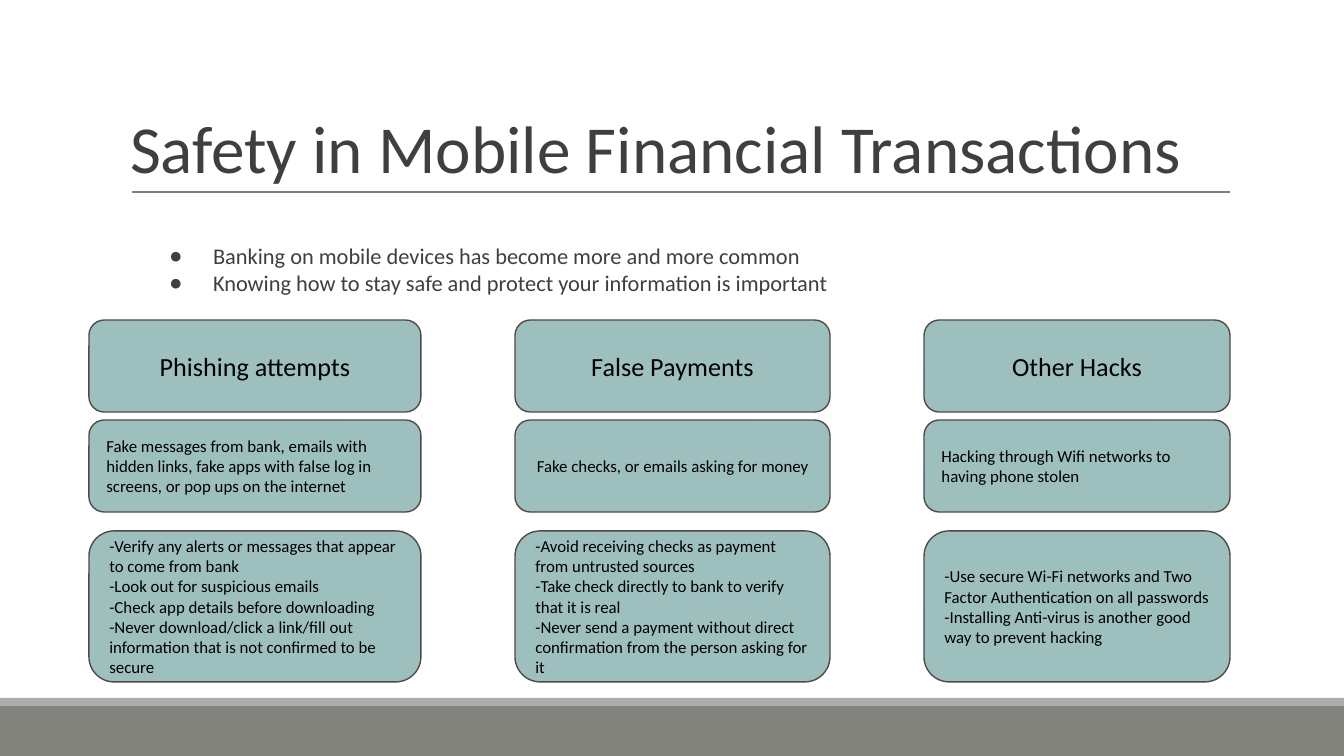
"""Build the slide on safety in mobile financial transactions."""
import pptx
import pptx.dml.color
import pptx.enum.shapes
import pptx.enum.text
import pptx.oxml.ns
import pptx.util
from lxml import etree

RGB = pptx.dml.color.RGBColor
SHAPE = pptx.enum.shapes.MSO_SHAPE
ALIGN = pptx.enum.text.PP_ALIGN
ANCHOR = pptx.enum.text.MSO_ANCHOR

SCALE = 914400 / 134.4
FONT = "Calibri"
INK = RGB(0x3F, 0x3F, 0x3F)
BLACK = RGB(0, 0, 0)
TEAL = RGB(0x9D, 0xBF, 0xBE)
EDGE = RGB(0x51, 0x49, 0x49)
RULE = RGB(0x7F, 0x7F, 0x7F)
BAND = RGB(0x82, 0x83, 0x7C)
STRIP = RGB(0xAC, 0xAD, 0xA8)

TITLE = "Safety in Mobile Financial Transactions"
POINTS = [
    "Banking on mobile devices has become more and more common",
    "Knowing how to stay safe and protect your information is important",
]
ROWS = [(320, 92), (420, 92), (531, 151)]
COLUMNS = [
    (89, 332, ALIGN.LEFT, "Phishing attempts",
     "Fake messages from bank, emails with hidden links, fake apps with "
     "false log in screens, or pop ups on the internet",
     ["-Verify any alerts or messages that appear to come from bank",
      "-Look out for suspicious emails",
      "-Check app details before downloading",
      "-Never download/click a link/fill out information that is not "
      "confirmed to be secure"]),
    (515, 315, ALIGN.CENTER, "False Payments",
     "Fake checks, or emails asking for money",
     ["-Avoid receiving checks as payment from untrusted sources",
      "-Take check directly to bank to verify that it is real",
      "-Never send a payment without direct confirmation from the person "
      "asking for it"]),
    (924, 306, ALIGN.LEFT, "Other Hacks",
     "Hacking through Wifi networks to having phone stolen",
     ["-Use secure Wi-Fi networks and Two Factor Authentication on all "
      "passwords",
      "-Installing Anti-virus is another good way to prevent hacking"]),
]


def px(size):
    return pptx.util.Emu(round(size * SCALE))


def place(shape, left, top, width, height):
    shape.left, shape.top = px(left), px(top)
    shape.width, shape.height = px(width), px(height)


def bullet(para, sign, left, hang):
    props = para._p.get_or_add_pPr()
    props.set("marL", str(px(left)))
    props.set("indent", str(-px(hang)))
    mark = etree.SubElement(props, pptx.oxml.ns.qn("a:buChar"))
    mark.set("char", sign)


def write(shape, lines, size=9, color=BLACK, align=ALIGN.LEFT,
          anchor=ANCHOR.MIDDLE, inset=(13, 13), leading=1.0, sign=None):
    frame = shape.text_frame
    frame.word_wrap = True
    frame.auto_size = pptx.enum.text.MSO_AUTO_SIZE.NONE
    frame.vertical_anchor = anchor
    frame.margin_left = frame.margin_right = px(inset[0])
    frame.margin_top = frame.margin_bottom = px(inset[1])
    for index, line in enumerate(lines):
        para = frame.add_paragraph() if index else frame.paragraphs[0]
        para.alignment = align
        para.line_spacing = leading
        para.space_before = pptx.util.Pt(0)
        if sign:
            bullet(para, sign, 67, 44)
        run = para.add_run()
        run.text = line
        run.font.name = FONT
        run.font.size = pptx.util.Pt(size)
        run.font.color.rgb = color


def block(slide, kind, area, fill, edge=None):
    shape = slide.shapes.add_shape(kind, *map(px, area))
    shape.shadow.inherit = False
    shape.fill.solid()
    shape.fill.fore_color.rgb = fill
    if edge is None:
        shape.line.fill.background()
    else:
        shape.line.color.rgb = edge
        shape.line.width = pptx.util.Pt(0.75)
    return shape


def rule(slide, left, right, top):
    line = slide.shapes.add_connector(
        pptx.enum.shapes.MSO_CONNECTOR.STRAIGHT,
        px(left), px(top), px(right), px(top))
    line.line.color.rgb = RULE
    line.line.width = pptx.util.Pt(0.75)
    etree.SubElement(line._element.spPr, pptx.oxml.ns.qn("a:effectLst"))


def column(slide, left, width, align, head, risk, tips):
    cells = [([head], 14, ALIGN.CENTER), ([risk], 9, align),
             (tips, 9, ALIGN.LEFT)]
    for (top, height), (lines, size, side) in zip(ROWS, cells):
        card = block(slide, SHAPE.ROUNDED_RECTANGLE,
                     (left, top, width, height), TEAL, EDGE)
        write(card, lines, size=size, align=side)


def main():
    deck = pptx.Presentation()
    deck.slide_width, deck.slide_height = px(1344), px(756)
    slide = deck.slides.add_slide(deck.slide_layouts[1])
    block(slide, SHAPE.RECTANGLE, (0, 706, 1344, 50), BAND)
    block(slide, SHAPE.RECTANGLE, (0, 698, 1344, 8), STRIP)
    rule(slide, 132, 1230, 192)
    title, body = slide.placeholders
    place(title, 121, 32, 1109, 160)
    write(title, [TITLE], size=36, color=INK, anchor=ANCHOR.BOTTOM,
          inset=(9, 5), leading=0.85)
    place(body, 133, 229, 1079, 82)
    write(body, POINTS, size=12, color=INK, anchor=ANCHOR.TOP, sign="●")
    for entry in COLUMNS:
        column(slide, *entry)
    deck.save("out.pptx")


if __name__ == "__main__":
    main()
